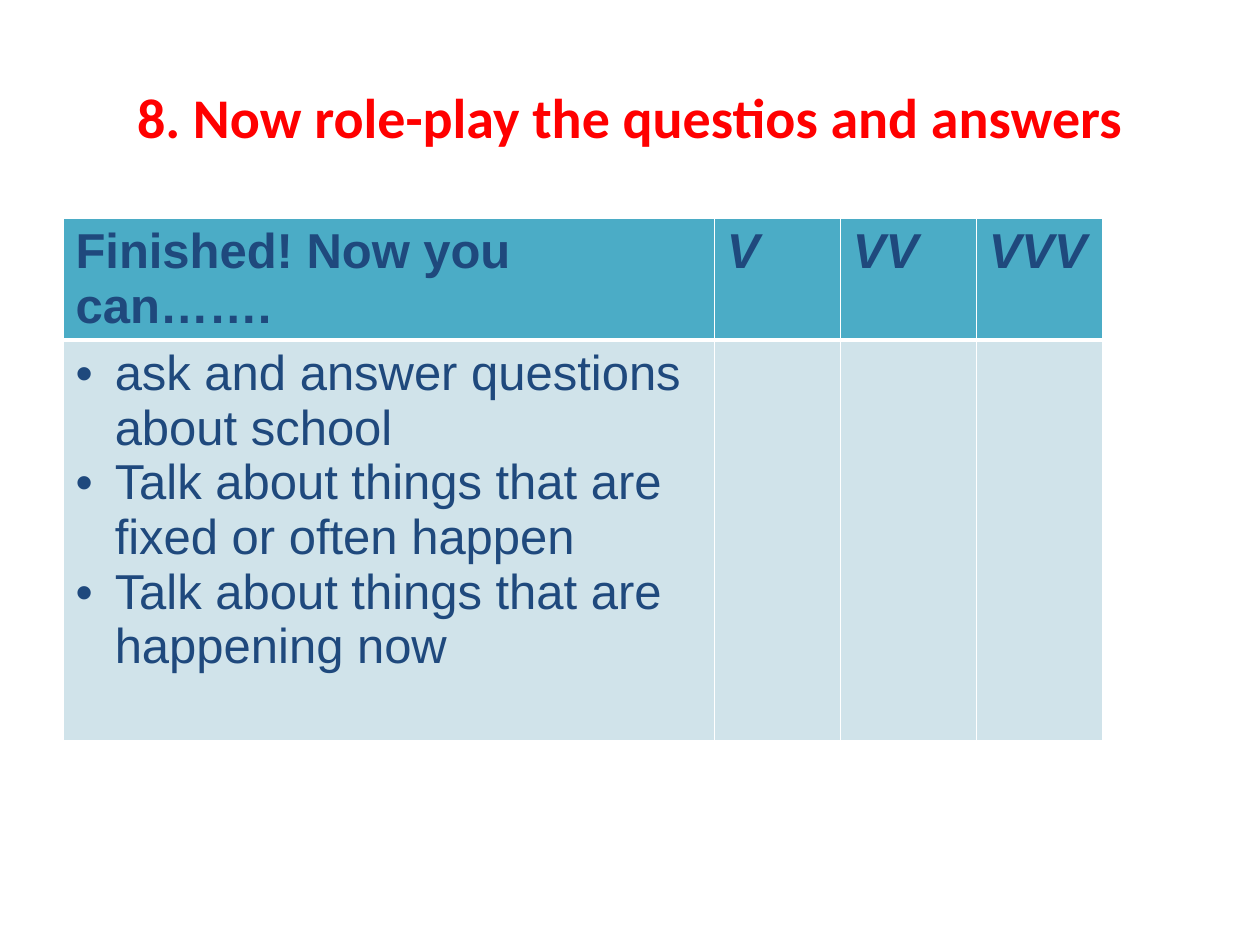
from lxml.etree import SubElement
from pptx import Presentation
from pptx.dml.color import RGBColor
from pptx.enum.text import MSO_ANCHOR, PP_ALIGN
from pptx.oxml.ns import qn
from pptx.util import Cm, Pt

NAVY, TEAL, PALE, RED, WHITE = "1F497D", "4BACC6", "D0E3EA", "FF0000", "FFFFFF"
HEADINGS = ["Finished! Now you can…….", "V", "VV", "VVV"]
SKILLS = [
    "ask and answer questions about school",
    "Talk about things that are fixed or often happen",
    "Talk about things that are happening now",
]
COLUMN_WIDTHS = [13.13, 2.54, 2.74, 2.54]
ROW_HEIGHTS = [2.42, 8.08]


def color(value):
    return RGBColor.from_string(value)


def add_run(para, text, size, font, ink, bold=False, italic=False):
    span = para.add_run()
    span.text = text
    span.font.size = Pt(size)
    span.font.name = font
    span.font.color.rgb = color(ink)
    span.font.bold = bold
    span.font.italic = italic


def add_bullet(para, indent):
    props = para._p.get_or_add_pPr()
    props.set("marL", str(Cm(indent)))
    props.set("indent", str(-Cm(indent)))
    SubElement(props, qn("a:buFont")).set("typeface", "Arial")
    SubElement(props, qn("a:buChar")).set("char", "•")


def style_cell(cell, fill, top, bottom):
    """Draw white borders, then fill the cell (the order the schema asks for)."""
    props = cell._tc.get_or_add_tcPr()
    for side, width in (("L", 1), ("R", 1), ("T", top), ("B", bottom)):
        line = SubElement(props, qn(f"a:ln{side}"), w=str(Pt(width)))
        paint = SubElement(line, qn("a:solidFill"))
        SubElement(paint, qn("a:srgbClr"), val=WHITE)
    cell.fill.solid()
    cell.fill.fore_color.rgb = color(fill)


def set_title(slide, text):
    title = slide.shapes.title
    title.left, title.top, title.width, title.height = Cm(1.27), Cm(0.76), Cm(22.86), Cm(3.18)
    title.text_frame.vertical_anchor = MSO_ANCHOR.MIDDLE
    para = title.text_frame.paragraphs[0]
    para.alignment = PP_ALIGN.CENTER
    add_run(para, text, 32, "Calibri", RED, bold=True)


def add_checklist(slide):
    table = slide.shapes.add_table(
        len(ROW_HEIGHTS), len(COLUMN_WIDTHS), Cm(1.27), Cm(4.4),
        Cm(sum(COLUMN_WIDTHS)), Cm(sum(ROW_HEIGHTS))).table
    for row, height in zip(table.rows, ROW_HEIGHTS):
        row.height = Cm(height)

    # Header and empty answer cells
    for index, (width, heading) in enumerate(zip(COLUMN_WIDTHS, HEADINGS)):
        table.columns[index].width = Cm(width)
        header, body = table.cell(0, index), table.cell(1, index)
        style_cell(header, TEAL, top=1, bottom=3)
        style_cell(body, PALE, top=3, bottom=1)
        add_run(header.text_frame.paragraphs[0], heading, 28, "Arial", NAVY,
                bold=True, italic=index > 0)

    # Bulleted skills
    frame = table.cell(1, 0).text_frame
    for index, skill in enumerate(SKILLS):
        para = frame.add_paragraph() if index else frame.paragraphs[0]
        add_bullet(para, 0.79)
        add_run(para, skill, 28, "Arial", NAVY)


def main():
    deck = Presentation()
    deck.slide_width, deck.slide_height = Cm(25.4), Cm(19.05)
    slide = deck.slides.add_slide(deck.slide_layouts[5])
    set_title(slide, "8. Now role-play the questios and answers")
    add_checklist(slide)
    deck.save("out.pptx")


if __name__ == "__main__":
    main()
